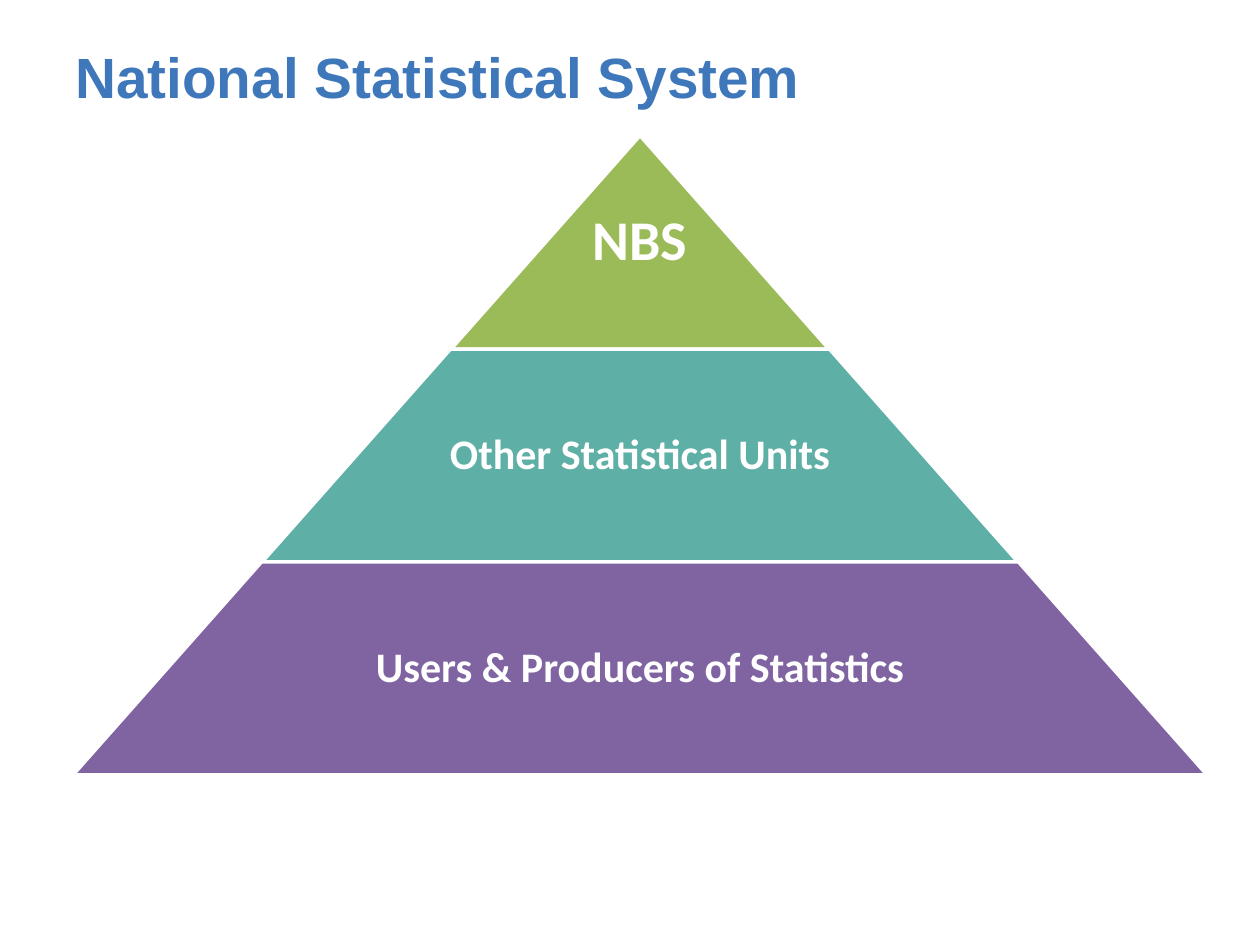
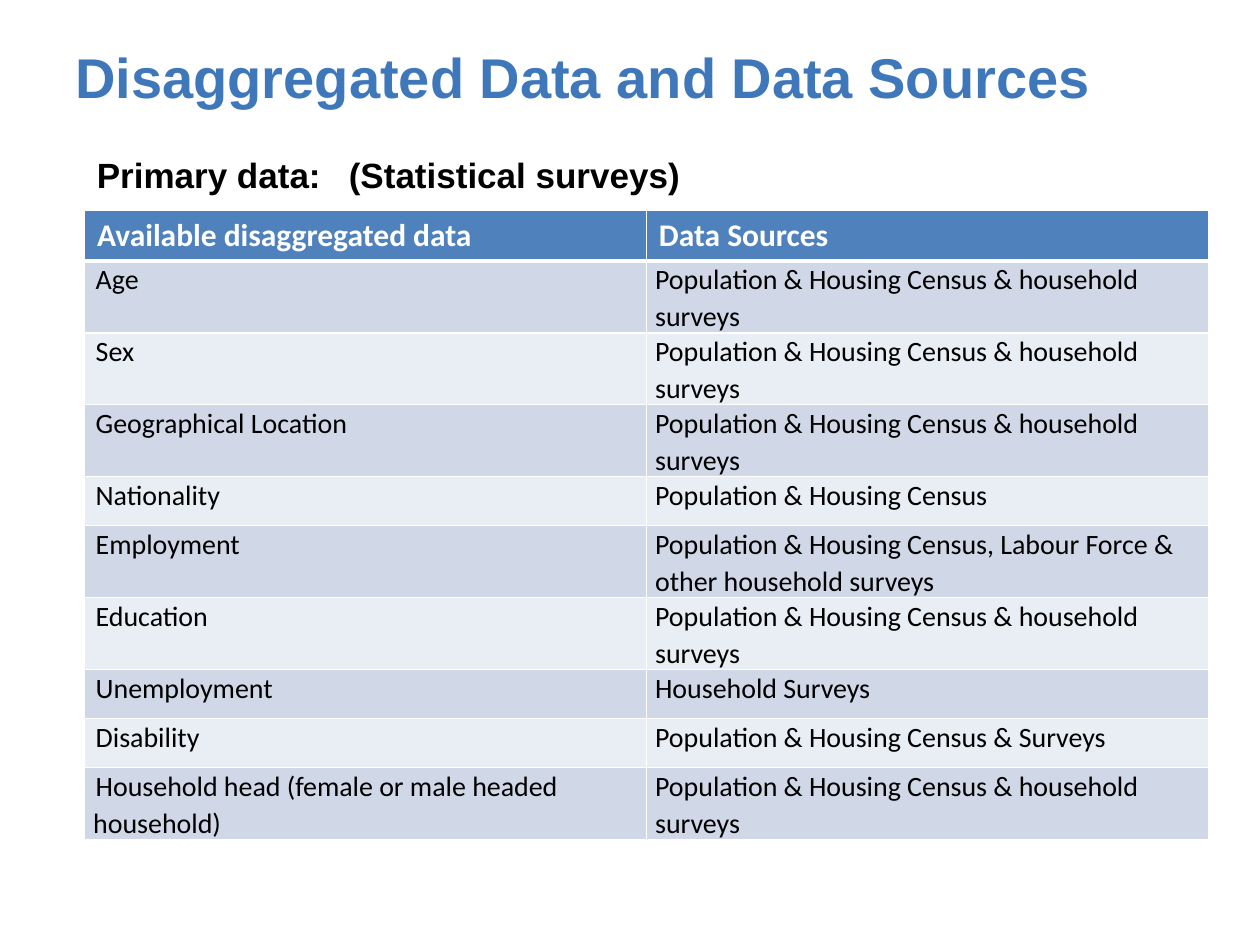
import lxml.etree
import pptx
import pptx.dml.color
import pptx.enum.shapes
import pptx.enum.text
import pptx.oxml.ns
import pptx.util

Inches = pptx.util.Inches
Pt = pptx.util.Pt
ANCHOR = pptx.enum.text.MSO_ANCHOR
ALIGN = pptx.enum.text.PP_ALIGN

COLOURS = {
    "title": "3F77BB",
    "black": "000000",
    "white": "FFFFFF",
    "green": "9BBB59",
    "teal": "5EAFA6",
    "purple": "8064A2",
    "header": "4F81BD",
    "band_dark": "D0D8E8",
    "band_light": "E9EDF4",
}

TIER_HEIGHT = 1.69
TIERS = [
    # label, fill, text size, share of the tier width given to the label
    ("NBS", "green", 32, 1),
    ("Other Statistical Units", "teal", 24, 0.65),
    ("Users & Producers of Statistics", "purple", 24, 0.65),
]

CENSUS = "Population & Housing Census"
CENSUS_AND_SURVEYS = CENSUS + " & household surveys"
SOURCES = [
    ("Available disaggregated data", "Data Sources"),
    ("Age", CENSUS_AND_SURVEYS),
    ("Sex", CENSUS_AND_SURVEYS),
    ("Geographical Location", CENSUS_AND_SURVEYS),
    ("Nationality", CENSUS),
    ("Employment", CENSUS + ", Labour Force & other household surveys"),
    ("Education", CENSUS_AND_SURVEYS),
    ("Unemployment", "Household Surveys"),
    ("Disability", CENSUS + " & Surveys"),
    ("Household head (female or male headed household)", CENSUS_AND_SURVEYS),
]
ROW_HEIGHTS = [0.4, 0.55, 0.55, 0.55, 0.39, 0.55, 0.39, 0.39, 0.39, 0.55]


def colour(name):
    return pptx.dml.color.RGBColor.from_string(COLOURS[name])


def set_values(target, values):
    for name, value in values.items():
        setattr(target, name, value)


def fill_solid(target, name):
    target.fill.solid()
    target.fill.fore_color.rgb = colour(name)


def write(paragraph, text, size, ink, font="Calibri", bold=True):
    span = paragraph.add_run()
    span.text = text
    set_values(span.font, {"name": font, "size": Pt(size), "bold": bold})
    span.font.color.rgb = colour(ink)


def add_box(page, left, top, width, height, anchor=ANCHOR.TOP):
    """Add a wrapping text box and return its text frame."""
    box = page.shapes.add_textbox(Inches(left), Inches(top), Inches(width), Inches(height))
    set_values(box.text_frame, {"word_wrap": True, "vertical_anchor": anchor})
    return box.text_frame


def add_page(deck, title, title_size):
    page = deck.slides.add_slide(deck.slide_layouts[6])
    frame = add_box(page, 0.5, 0.3, 9, 0.62, ANCHOR.BOTTOM)
    write(frame.paragraphs[0], title, title_size, "title", "Arial")
    return page


def add_tier(page, index, label, fill, size, label_share):
    """Add one pyramid level; each is one step wider and lower than the last."""
    width, top = 3 * (index + 1), 1.08 + index * TIER_HEIGHT
    centre = 5.08
    tier = page.shapes.add_shape(
        pptx.enum.shapes.MSO_SHAPE.TRAPEZOID,
        Inches(centre - width / 2), Inches(top), Inches(width), Inches(TIER_HEIGHT))
    tier.adjustments[0] = 0.885
    tier.shadow.inherit = False
    fill_solid(tier, fill)
    tier.line.color.rgb = colour("white")
    tier.line.width = Pt(2)

    label_width = width * label_share
    frame = add_box(page, centre - label_width / 2, top, label_width, TIER_HEIGHT, ANCHOR.MIDDLE)
    margins = ("margin_left", "margin_top", "margin_right", "margin_bottom")
    set_values(frame, dict.fromkeys(margins, Inches(0.03)))
    set_values(frame.paragraphs[0], {"alignment": ALIGN.CENTER, "line_spacing": 0.9})
    write(frame.paragraphs[0], label, size, "white")


def add_subheading(page, label, detail):
    paragraph = add_box(page, 0.67, 1.17, 4.95, 0.44).paragraphs[0]
    qn = pptx.oxml.ns.qn
    tabs = lxml.etree.SubElement(paragraph._p.get_or_add_pPr(), qn("a:tabLst"))
    lxml.etree.SubElement(tabs, qn("a:tab"), pos=str(Inches(2)), algn="l")
    write(paragraph, label + "\t" + detail, 20, "black", "Arial")


def add_borders(cell, **widths):
    """Draw white cell borders, 1 point wide unless a side says otherwise."""
    qn = pptx.oxml.ns.qn
    properties = cell._tc.get_or_add_tcPr()
    for side in "LRTB":
        line = lxml.etree.SubElement(
            properties, qn("a:ln" + side), w=str(Pt(widths.get(side, 1))))
        fill = lxml.etree.SubElement(line, qn("a:solidFill"))
        lxml.etree.SubElement(fill, qn("a:srgbClr"), val=COLOURS["white"])


def fill_header_cell(cell, text):
    add_borders(cell, B=3)
    fill_solid(cell, "header")
    write(cell.text_frame.paragraphs[0], text, 18, "white")


def fill_body_cell(cell, text, row, column):
    add_borders(cell, T=3 if row == 1 else 1)
    fill_solid(cell, "band_dark" if row % 2 else "band_light")
    set_values(cell, {"margin_left": Inches(0.07), "margin_right": Inches(0.07),
                      "margin_top": 0, "margin_bottom": 0})
    paragraph = cell.text_frame.paragraphs[0]
    paragraph.line_spacing = 1.07
    if column == 0:
        properties = paragraph._p.get_or_add_pPr()
        properties.set("marL", "0")
        properties.set("indent", str(Inches(0.02)))
    write(paragraph, text, 16, "black", bold=False)


def add_source_table(page):
    table = page.shapes.add_table(
        len(SOURCES), 2, Inches(0.67), Inches(1.67), Inches(8.92),
        Inches(sum(ROW_HEIGHTS))).table
    for row, (texts, height) in enumerate(zip(SOURCES, ROW_HEIGHTS)):
        table.rows[row].height = Inches(height)
        for column, text in enumerate(texts):
            cell = table.cell(row, column)
            if row == 0:
                fill_header_cell(cell, text)
            else:
                fill_body_cell(cell, text, row, column)


def main():
    deck = pptx.Presentation()
    set_values(deck, {"slide_width": Inches(10), "slide_height": Inches(7.5)})

    page = add_page(deck, "National Statistical System", 32.4)
    for index, tier in enumerate(TIERS):
        add_tier(page, index, *tier)

    page = add_page(deck, "Disaggregated Data and Data Sources", 32)
    add_source_table(page)
    add_subheading(page, "Primary data:", "(Statistical surveys)")

    deck.save("out.pptx")


if __name__ == "__main__":
    main()
